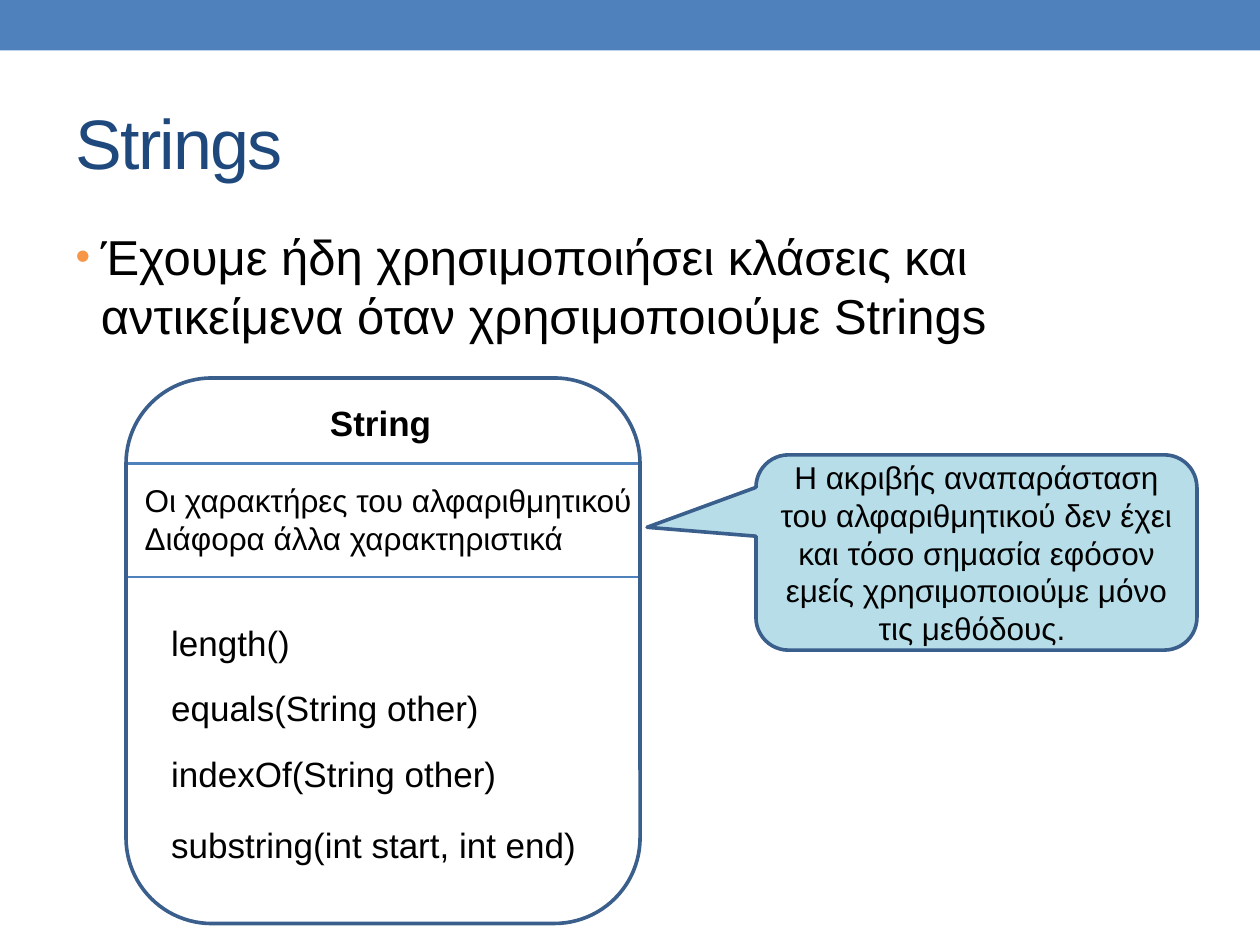
from dataclasses import dataclass

from lxml.etree import SubElement
from pptx import Presentation
from pptx.dml.color import RGBColor
from pptx.enum.shapes import MSO_CONNECTOR, MSO_SHAPE
from pptx.enum.text import MSO_ANCHOR, MSO_AUTO_SIZE, PP_ALIGN
from pptx.oxml.ns import qn
from pptx.util import Inches, Pt


@dataclass(frozen=True)
class Theme:
    font: str = "Arial"
    accent: RGBColor = RGBColor(0x4F, 0x81, 0xBD)
    outline: RGBColor = RGBColor(0x3A, 0x5F, 0x8C)
    title: RGBColor = RGBColor(0x1F, 0x49, 0x7D)
    text: RGBColor = RGBColor(0, 0, 0)
    callout: RGBColor = RGBColor(0xB7, 0xDE, 0xE8)
    bullet: str = "F79646"
    title_size: int = 40
    body_size: int = 28
    member_size: int = 20
    note_size: int = 18
    outline_width: float = 2.08
    divider_width: float = 1.5


@dataclass(frozen=True)
class Box:
    left: float
    top: float
    width: float
    height: float

    def lengths(self) -> tuple:
        return tuple(Inches(v) for v in (self.left, self.top, self.width, self.height))


@dataclass(frozen=True)
class Label:
    box: Box
    lines: tuple
    size: int
    bold: bool = False
    wrap: bool = False


THEME = Theme()
CLASS_BOX = Box(1, 3, 4.08, 4.33)
DIVIDER_TOPS = (3.68, 4.58)
METHODS = (
    (4.88, 1.15, "length()"),
    (5.4, 2.66, "equals(String other)"),
    (5.92, 2.8, "indexOf(String other)"),
    (6.49, 3.44, "substring(int start, int end)"),
)
LABELS = [
    Label(Box(2.52, 3.14, 1.01, 0.44), ("String",), THEME.member_size, bold=True),
    Label(
        Box(1.05, 3.77, 4.17, 0.71),
        ("Οι χαρακτήρες του αλφαριθμητικού", "Διάφορα άλλα χαρακτηριστικά"),
        THEME.note_size,
        wrap=True,
    ),
] + [
    Label(Box(1.26, top, width, 0.44), (text,), THEME.member_size)
    for top, width, text in METHODS
]


def style_paragraph(paragraph, size: int, color: RGBColor = THEME.text, bold: bool = False) -> None:
    font = paragraph.font
    font.name, font.size, font.bold = THEME.font, Pt(size), bold
    font.color.rgb = color


def place(shape, box: Box) -> None:
    shape.left, shape.top, shape.width, shape.height = box.lengths()


def add_panel(slide, kind: MSO_SHAPE, box: Box, fill=None, outline=None):
    shape = slide.shapes.add_shape(kind, *box.lengths())
    shape.shadow.inherit = False
    if fill is None:
        shape.fill.background()
    else:
        shape.fill.solid()
        shape.fill.fore_color.rgb = fill
    if outline is None:
        shape.line.fill.background()
    else:
        shape.line.color.rgb = outline
        shape.line.width = Pt(THEME.outline_width)
    return shape


def add_label(slide, label: Label) -> None:
    frame = slide.shapes.add_textbox(*label.box.lengths()).text_frame
    frame.word_wrap = label.wrap
    frame.auto_size = MSO_AUTO_SIZE.SHAPE_TO_FIT_TEXT
    frame.text = "\n".join(label.lines)
    for paragraph in frame.paragraphs:
        style_paragraph(paragraph, label.size, bold=label.bold)


def add_divider(slide, top: float) -> None:
    right = CLASS_BOX.left + CLASS_BOX.width
    line = slide.shapes.add_connector(
        MSO_CONNECTOR.STRAIGHT, Inches(CLASS_BOX.left), Inches(top), Inches(right), Inches(top)
    )
    line.line.color.rgb = THEME.accent
    line.line.width = Pt(THEME.divider_width)
    SubElement(line._element.spPr, qn("a:effectLst"))


def fill_title(title) -> None:
    place(title, Box(0.5, 0.58, 9, 1.08))
    frame = title.text_frame
    frame.text = "Strings"
    frame.vertical_anchor = MSO_ANCHOR.MIDDLE
    paragraph = frame.paragraphs[0]
    paragraph.alignment = PP_ALIGN.LEFT
    style_paragraph(paragraph, THEME.title_size, THEME.title)
    paragraph.runs[0]._r.get_or_add_rPr().set("spc", "-100")


def fill_body(body) -> None:
    place(body, Box(0.5, 1.75, 9, 5.33))
    body.text_frame.text = (
        "Έχουμε ήδη χρησιμοποιήσει κλάσεις και αντικείμενα όταν χρησιμοποιούμε Strings"
    )
    paragraph = body.text_frame.paragraphs[0]
    style_paragraph(paragraph, THEME.body_size)
    # Hanging indent and coloured bullet
    properties = paragraph._p.get_or_add_pPr()
    properties.set("marL", str(Inches(0.2)))
    properties.set("indent", str(Inches(-0.2)))
    bullet = (
        SubElement(SubElement(properties, qn("a:buClr")), qn("a:srgbClr"), val=THEME.bullet),
        SubElement(properties, qn("a:buSzPct"), val="85000"),
        SubElement(properties, qn("a:buFont"), typeface=THEME.font),
        SubElement(properties, qn("a:buChar"), char="•"),
    )
    # The schema wants the bullet before the font defaults
    defaults = properties.find(qn("a:defRPr"))
    if defaults is not None and bullet:
        properties.append(defaults)


def add_callout(slide) -> None:
    callout = add_panel(
        slide, MSO_SHAPE.ROUNDED_RECTANGULAR_CALLOUT, Box(6, 3.61, 3.5, 1.55),
        THEME.callout, THEME.outline,
    )
    for index, value in enumerate((-0.747, -0.129, 0.167)):
        callout.adjustments[index] = value
    frame = callout.text_frame
    frame.word_wrap = True
    frame.vertical_anchor = MSO_ANCHOR.MIDDLE
    frame.text = (
        "Η ακριβής αναπαράσταση του αλφαριθμητικού δεν έχει και τόσο σημασία "
        "εφόσον εμείς χρησιμοποιούμε μόνο τις μεθόδους. "
    )
    paragraph = frame.paragraphs[0]
    paragraph.alignment = PP_ALIGN.CENTER
    style_paragraph(paragraph, THEME.note_size)


def main() -> None:
    presentation = Presentation()
    presentation.slide_width, presentation.slide_height = Inches(10), Inches(7.5)
    slide = presentation.slides.add_slide(presentation.slide_layouts[1])

    # Top band, title and bullet
    add_panel(slide, MSO_SHAPE.RECTANGLE, Box(0, 0, 10, 0.4), THEME.accent)
    fill_title(slide.shapes.title)
    fill_body(slide.placeholders[1])

    # Class diagram
    for top in DIVIDER_TOPS:
        add_divider(slide, top)
    add_panel(slide, MSO_SHAPE.ROUNDED_RECTANGLE, CLASS_BOX, outline=THEME.outline)
    for label in LABELS:
        add_label(slide, label)

    # Remark on the fields
    add_callout(slide)
    presentation.save("out.pptx")


if __name__ == "__main__":
    main()
